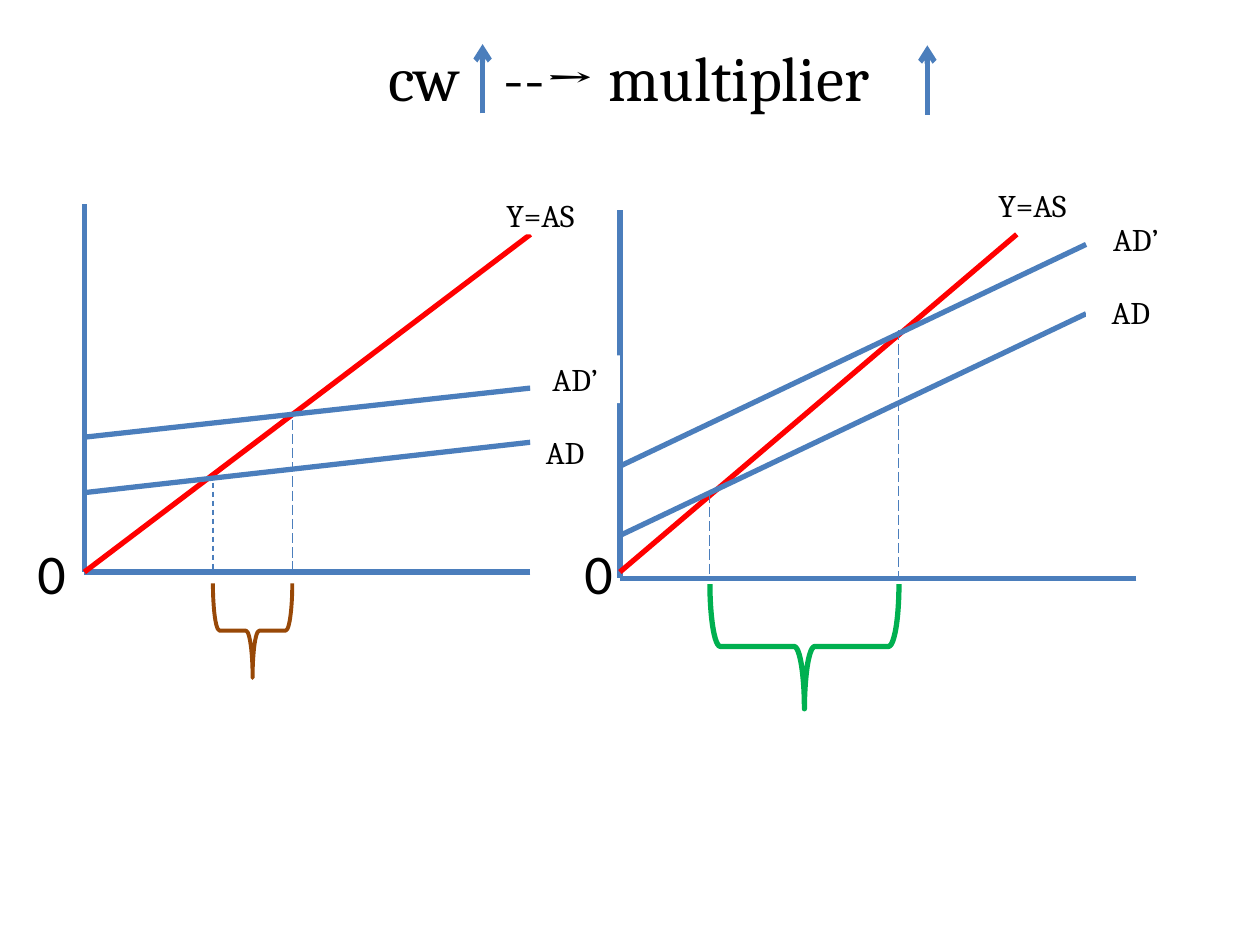
from dataclasses import dataclass
from typing import NamedTuple

from lxml.etree import SubElement
from pptx import Presentation
from pptx.dml.color import RGBColor
from pptx.enum.dml import MSO_LINE
from pptx.enum.shapes import MSO_CONNECTOR, MSO_SHAPE
from pptx.enum.text import MSO_ANCHOR, PP_ALIGN
from pptx.oxml.ns import qn
from pptx.slide import Slide
from pptx.text.text import TextFrame
from pptx.util import Inches, Pt


@dataclass(frozen=True)
class Theme:
    black: str = "000000"
    white: str = "FFFFFF"
    blue: str = "4B7EBC"
    red: str = "FF0000"
    brown: str = "984807"
    green: str = "00B050"
    serif: str = "Cambria"
    sans: str = "Calibri"
    title_size: int = 36
    origin_size: int = 32
    label_size: int = 18
    thick: float = 3
    thin: float = 0.75


THEME = Theme()


class Point(NamedTuple):
    x: float
    y: float


class Area(NamedTuple):
    left: float
    top: float
    width: float
    height: float


class Label(NamedTuple):
    text: str
    area: Area


class Guide(NamedTuple):
    top: Point
    dash: MSO_LINE


class Brace(NamedTuple):
    area: Area
    color: str
    weight: float


@dataclass(frozen=True)
class Graph:
    axis_x: float
    axis_top: float
    axis_right: float
    axis_y: float
    supply_end: Point
    demand_right: float
    demand_heights: tuple[tuple[float, float], ...]
    guides: tuple[Guide, ...]
    labels: tuple[Label, ...]
    brace: Brace
    zero_x: float


ORIGIN_Y = 4.54

GRAPHS = (
    Graph(
        0.67, 1.62, 4.21, 4.54, Point(4.21, 1.86),
        4.21, ((3.91, 3.51), (3.47, 3.08)),
        (Guide(Point(1.69, 3.83), MSO_LINE.DASH),
         Guide(Point(2.32, 3.33), MSO_LINE.LONG_DASH)),
        (Label("Y=AS", Area(3.82, 1.55, 0.94, 0.31)),
         Label("AD", Area(4.21, 3.47, 0.55, 0.24)),
         Label("AD’", Area(4.21, 2.82, 0.71, 0.38))),
        Brace(Area(1.63, 4.69, 0.75, 0.63), THEME.brown, 2.25),
        0.41,
    ),
    Graph(
        4.92, 1.67, 9.02, 4.59, Point(8.07, 1.86),
        8.62, ((4.25, 2.49), (3.7, 1.94)),
        (Guide(Point(5.63, 3.91), MSO_LINE.LONG_DASH),
         Guide(Point(7.13, 2.62), MSO_LINE.LONG_DASH)),
        (Label("Y=AS", Area(7.76, 1.47, 0.87, 0.31)),
         Label("AD’", Area(8.7, 1.7, 0.63, 0.39)),
         Label("AD", Area(8.62, 2.33, 0.71, 0.29))),
        Brace(Area(5.89, 4.38, 0.99, 1.5), THEME.green, 3),
        4.75,
    ),
)


def inches(values: tuple[float, ...]) -> list[Inches]:
    return [Inches(value) for value in values]


def set_text(frame: TextFrame, text: str, font: str, size: int) -> None:
    frame.text = text
    frame.vertical_anchor = MSO_ANCHOR.MIDDLE
    paragraph = frame.paragraphs[0]
    paragraph.alignment = PP_ALIGN.CENTER
    for span in paragraph.runs:
        span.font.name = font
        span.font.size = Pt(size)
        span.font.color.rgb = RGBColor.from_string(THEME.black)


def draw_line(page: Slide, start: Point, end: Point, color: str = THEME.blue,
              weight: float = THEME.thick, dash: MSO_LINE | None = None,
              arrow: bool = False) -> None:
    line = page.shapes.add_connector(MSO_CONNECTOR.STRAIGHT, *inches((*start, *end)))
    line.line.color.rgb = RGBColor.from_string(color)
    line.line.width = Pt(weight)
    if dash is not None:
        line.line.dash_style = dash
    if arrow:
        SubElement(line.line._get_or_add_ln(), qn("a:tailEnd"), type="arrow")
    SubElement(line._element.spPr, qn("a:effectLst"))


def draw_title(page: Slide) -> None:
    box = page.shapes.add_textbox(*inches(Area(0.5, 0.3, 9, 0.61)))
    frame = box.text_frame
    frame.word_wrap = True
    frame.margin_left = Inches(2.58)
    set_text(frame, "cw\t--→ multiplier", THEME.serif, THEME.title_size)
    paragraph = frame.paragraphs[0]
    paragraph.alignment = PP_ALIGN.LEFT
    stops = SubElement(paragraph._p.get_or_add_pPr(), qn("a:tabLst"))
    SubElement(stops, qn("a:tab"), pos=str(Inches(0.92)), algn="l")


def draw_zero(page: Slide, center_x: float) -> None:
    width, height = 0.3, 0.54
    area = Area(center_x - width / 2, ORIGIN_Y - height / 2, width, height)
    box = page.shapes.add_textbox(*inches(area))
    frame = box.text_frame
    frame.margin_left = frame.margin_right = 0
    frame.margin_top = frame.margin_bottom = 0
    frame.word_wrap = True
    set_text(frame, "0", THEME.sans, THEME.origin_size)


def draw_label(page: Slide, label: Label) -> None:
    box = page.shapes.add_shape(MSO_SHAPE.RECTANGLE, *inches(label.area))
    box.shadow.inherit = False
    box.fill.solid()
    box.fill.fore_color.rgb = RGBColor.from_string(THEME.white)
    box.line.fill.background()
    set_text(box.text_frame, label.text, THEME.serif, THEME.label_size)


def draw_brace(page: Slide, brace: Brace) -> None:
    shape = page.shapes.add_shape(MSO_SHAPE.LEFT_BRACE, *inches(brace.area))
    shape.rotation = 270
    shape.shadow.inherit = False
    shape.fill.background()
    shape.line.color.rgb = RGBColor.from_string(brace.color)
    shape.line.width = Pt(brace.weight)


def draw_graph(page: Slide, graph: Graph) -> None:
    corner = Point(graph.axis_x, graph.axis_y)
    draw_zero(page, graph.zero_x)
    draw_line(page, Point(graph.axis_x, graph.axis_top), corner)
    draw_line(page, Point(graph.axis_right, graph.axis_y), corner)
    draw_line(page, Point(graph.axis_x, ORIGIN_Y), graph.supply_end, THEME.red)
    for left_y, right_y in graph.demand_heights:
        draw_line(page, Point(graph.demand_right, right_y), Point(graph.axis_x, left_y))
    for top, dash in graph.guides:
        draw_line(page, top, Point(top.x, graph.axis_y), weight=THEME.thin, dash=dash)


def main() -> None:
    deck = Presentation()
    deck.slide_width, deck.slide_height = Inches(10), Inches(7.5)
    page = deck.slides.add_slide(deck.slide_layouts[6])
    draw_title(page)
    for graph in GRAPHS:
        draw_graph(page, graph)
    for graph in GRAPHS:
        for label in graph.labels:
            draw_label(page, label)
        draw_brace(page, graph.brace)
    for foot in (Point(7.36, 0.91), Point(3.83, 0.9)):
        draw_line(page, foot, Point(foot.x, foot.y - 0.55), arrow=True)
    deck.save("out.pptx")


if __name__ == "__main__":
    main()
